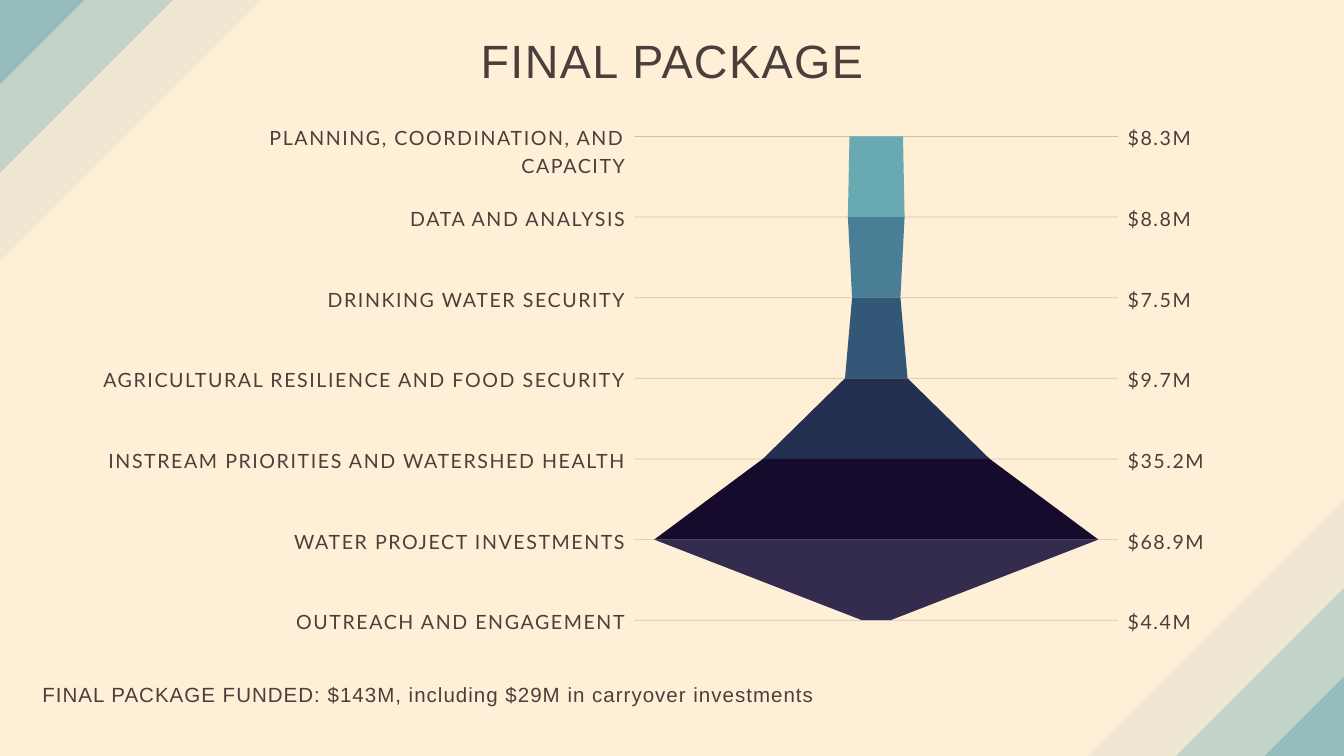
import itertools

import lxml.etree
import pptx
import pptx.dml.color
import pptx.enum.shapes
import pptx.enum.text
import pptx.oxml.ns
import pptx.util

RGBColor = pptx.dml.color.RGBColor
CREAM = RGBColor(0xFF, 0xEF, 0xD6)
BROWN = RGBColor(0x49, 0x40, 0x3C)
TEAL = RGBColor(0x69, 0xA9, 0xB2)
BLUE = RGBColor(0x49, 0x7F, 0x96)
STEEL = RGBColor(0x33, 0x57, 0x76)
NAVY = RGBColor(0x23, 0x30, 0x52)
INK = RGBColor(0x16, 0x0B, 0x2C)
PLUM = RGBColor(0x34, 0x2C, 0x4E)

ALIGN = pptx.enum.text.PP_ALIGN

presentation = pptx.Presentation()
presentation.slide_width = pptx.util.Inches(20)
presentation.slide_height = pptx.util.Inches(11.25)
slide = presentation.slides.add_slide(presentation.slide_layouts[5])
slide.background.fill.solid()
slide.background.fill.fore_color.rgb = CREAM
shapes = slide.shapes
column = row = presentation.slide_width / 20


def write_text(shape, box, text, size, font, spacing, leading, alignment):
    shape.left, shape.top, shape.width, shape.height = [int(column * length) for length in box]
    frame = shape.text_frame
    frame.word_wrap = True
    frame.auto_size = pptx.enum.text.MSO_AUTO_SIZE.SHAPE_TO_FIT_TEXT
    frame.vertical_anchor = pptx.enum.text.MSO_ANCHOR.TOP
    frame.margin_left = frame.margin_right = frame.margin_top = frame.margin_bottom = 0
    paragraph = frame.paragraphs[0]
    paragraph.alignment = alignment
    paragraph.line_spacing = pptx.util.Pt(leading)
    run = paragraph.add_run()
    run.text = text
    run.font.size = pptx.util.Pt(size)
    run.font.name = font
    run.font.color.rgb = BROWN
    run.font._element.set("spc", str(int(spacing * 100)))


def paint(fill, color, opacity=100):
    fill.solid()
    fill.fore_color.rgb = color
    if opacity < 100:
        color_element = fill._xPr.find(pptx.oxml.ns.qn("a:solidFill"))[0]
        alpha = lxml.etree.SubElement(color_element, pptx.oxml.ns.qn("a:alpha"))
        alpha.set("val", str(opacity * 1000))


write_text(shapes.title, (0, 0.47, 20, 0.84), "FINAL PACKAGE", 50, "Arial", 1.5, 60, ALIGN.CENTER)

stripe_gap = 0.66
for left, top, direction, rotation in [(0.36, -6.21, 1, 45), (19.26, 5.04, -1, 225)]:
    for index, opacity in enumerate([70, 40, 10]):
        offset = direction * index * stripe_gap
        stripe = shapes.add_shape(
            pptx.enum.shapes.MSO_SHAPE.RECTANGLE,
            int(column * (left + offset)), int(row * (top + offset)),
            int(column * 0.94), int(row * 11.93))
        stripe.rotation = rotation
        stripe.shadow.inherit = False
        stripe.line.fill.background()
        paint(stripe.fill, TEAL, opacity)

write_text(shapes.add_textbox(0, 0, 0, 0), (0.63, 10.09, 14.99, 0.42),
           "FINAL PACKAGE FUNDED: $143M, including $29M in carryover investments",
           22, "Arial", 1.1, 30.8, ALIGN.LEFT)

stages = [
    ("PLANNING, COORDINATION, AND CAPACITY", 6.82, 8.3),
    ("DATA AND ANALYSIS", 3.55, 8.8),
    ("DRINKING WATER SECURITY", 4.48, 7.5),
    ("AGRICULTURAL RESILIENCE AND FOOD SECURITY", 7.79, 9.7),
    ("INSTREAM PRIORITIES AND WATERSHED HEALTH", 7.85, 35.2),
    ("WATER PROJECT INVESTMENTS", 5.02, 68.9),
    ("OUTREACH AND ENGAGEMENT", 5.13, 4.4),
]
label_right, value_left = 9.3, 16.78
line_left, line_right = 9.44, 16.64
funnel_top, stage_height = 2.03, 1.2
funnel_center = (line_left + line_right) / 2
width_per_million = 6.61 / 68.9

for index, (label, label_width, value) in enumerate(stages):
    text_top = funnel_top - 0.21 + index * stage_height
    write_text(shapes.add_textbox(0, 0, 0, 0), (label_right - label_width, text_top, label_width, 0.39),
               label, 21, "Lato", 1.7, 29.4, ALIGN.RIGHT)
    write_text(shapes.add_textbox(0, 0, 0, 0), (value_left, text_top, 1.4, 0.39),
               f"${value}M", 21, "Lato", 1.7, 29.4, ALIGN.LEFT)

    line_y = int(row * (funnel_top + index * stage_height))
    grid_line = shapes.add_connector(
        pptx.enum.shapes.MSO_CONNECTOR.STRAIGHT,
        int(column * line_left), line_y, int(column * line_right), line_y)
    grid_line.line.width = pptx.util.Pt(0.75)
    paint(grid_line.line.fill, BROWN, 25)
    lxml.etree.SubElement(grid_line._element.spPr, pptx.oxml.ns.qn("a:effectLst"))

half_widths = [value * width_per_million / 2 for label, label_width, value in stages]
band_colors = [TEAL, BLUE, STEEL, NAVY, INK, PLUM]
for index, (color, (upper, lower)) in enumerate(zip(band_colors, itertools.pairwise(half_widths))):
    top = funnel_top + index * stage_height
    bottom = top + stage_height
    corners = [(funnel_center - upper, top), (funnel_center + upper, top),
               (funnel_center + lower, bottom), (funnel_center - lower, bottom)]
    points = [(int(column * x), int(row * y)) for x, y in corners]
    builder = shapes.build_freeform(*points[0])
    builder.add_line_segments(points[1:], close=True)
    band = builder.convert_to_shape()
    band.shadow.inherit = False
    band.line.fill.background()
    paint(band.fill, color)

presentation.save("out.pptx")
